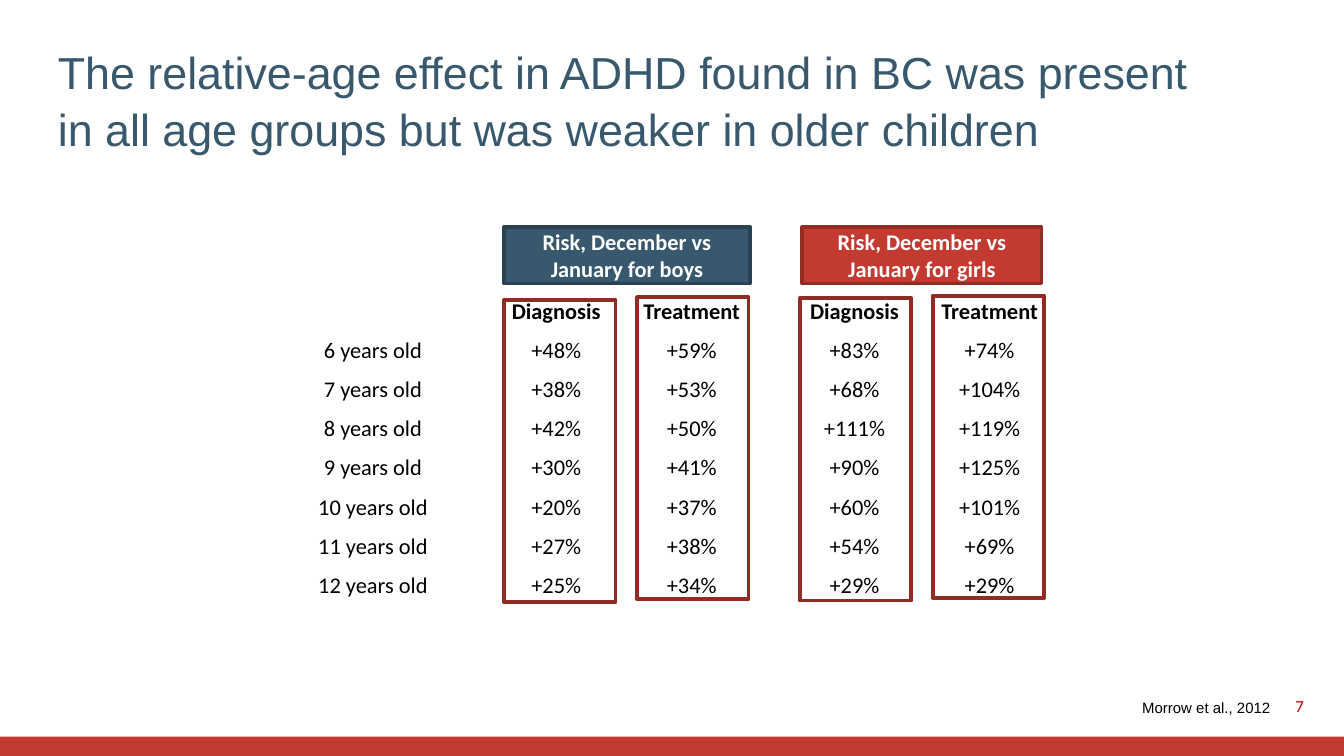
from dataclasses import dataclass

from pptx import Presentation
from pptx.dml.color import RGBColor
from pptx.enum.shapes import MSO_SHAPE
from pptx.enum.text import MSO_ANCHOR, MSO_AUTO_SIZE, PP_ALIGN
from pptx.util import Pt


@dataclass(frozen=True)
class Theme:
    blue: str = "38586E"
    navy: str = "294151"
    red: str = "C33B30"
    dark: str = "902C24"
    page: str = "C00000"
    black: str = "000000"
    white: str = "FFFFFF"
    head: str = "Arial"
    body: str = "Calibri"
    title: int = 24
    cell: int = 12
    num: int = 9
    cite: int = 8


THEME = Theme()
ROW_TOP, ROW_STEP, ROW_H = 157.2, 21, 18
AGE_LEFT, AGE_W = 154.8, 90
CELL_W, FRAME_W, FRAME_H = 66, 59.8, 162

AGES = range(6, 13)
# Heading, cell left, frame left, frame top, risk by age
COLUMNS = [
    ("Diagnosis", 265, 270, 160.6, [48, 38, 42, 30, 20, 27, 25]),
    ("Treatment", 337.6, 341.3, 159.1, [59, 53, 50, 41, 37, 38, 34]),
    ("Diagnosis", 424.8, 428.4, 159.8, [83, 68, 111, 90, 60, 54, 29]),
    ("Treatment", 497.2, 499.7, 158.4, [74, 104, 119, 125, 101, 69, 29]),
]


def write(shape, text, size, color, font=THEME.body, bold=False,
          align=PP_ALIGN.CENTER, anchor=MSO_ANCHOR.MIDDLE):
    frame = shape.text_frame
    frame.word_wrap = True
    frame.auto_size = MSO_AUTO_SIZE.NONE
    frame.vertical_anchor = anchor
    frame.text = text
    para = frame.paragraphs[0]
    para.alignment = align
    para.font.size = Pt(size)
    para.font.name = font
    para.font.bold = bold
    para.font.color.rgb = RGBColor.from_string(color)


def add_text(slide, box, text, size, color, **style):
    shape = slide.shapes.add_textbox(*map(Pt, box))
    write(shape, text, size, color, **style)
    return shape


def add_cell(slide, left, row, width, text, bold=False):
    """Add one table entry; row 0 holds the column headings."""
    box = (left, ROW_TOP + row * ROW_STEP, width, ROW_H)
    frame = add_text(slide, box, text, THEME.cell, THEME.black,
                     bold=bold).text_frame
    frame.margin_left = frame.margin_right = 0
    frame.margin_top = frame.margin_bottom = 0


def add_box(slide, box, fill=None, line=None):
    shape = slide.shapes.add_shape(MSO_SHAPE.RECTANGLE, *map(Pt, box))
    shape.shadow.inherit = False
    if fill:
        shape.fill.solid()
        shape.fill.fore_color.rgb = RGBColor.from_string(fill)
    else:
        shape.fill.background()
    if line:
        shape.line.color.rgb = RGBColor.from_string(line)
        shape.line.width = Pt(2)
    else:
        shape.line.fill.background()
    return shape


def add_title(slide, text):
    title = slide.shapes.title
    title.left, title.top = Pt(23.8), Pt(28.8)
    title.width, title.height = Pt(641.5), Pt(48.2)
    write(title, text, THEME.title, THEME.blue, font=THEME.head,
          align=PP_ALIGN.LEFT)
    title.text_frame.paragraphs[0].line_spacing = 1.05


def add_banner(slide, left, width, who, fill, line):
    shape = add_box(slide, (left, 121.7, width, 30.2), fill, line)
    write(shape, f"Risk, December vs January for {who}", THEME.cell,
          THEME.white, bold=True)


def add_risks(slide):
    for row, age in enumerate(AGES, 1):
        add_cell(slide, AGE_LEFT, row, AGE_W, f"{age} years old")
    for head, left, edge, top, risks in COLUMNS:
        add_cell(slide, left, 0, CELL_W, head, bold=True)
        for row, risk in enumerate(risks, 1):
            add_cell(slide, left, row, CELL_W, f"+{risk}%")
        add_box(slide, (edge, top, FRAME_W, FRAME_H), line=THEME.dark)


def add_footer(slide):
    add_box(slide, (0, 394.6, 720, 10.4), THEME.red)
    add_text(slide, (678.2, 367.2, 27.4, 21.6), "7", THEME.num, THEME.page,
             align=PP_ALIGN.RIGHT)
    add_text(slide, (604.8, 370.8, 90.7, 18), "Morrow et al., 2012",
             THEME.cite, THEME.black, font=THEME.head,
             align=PP_ALIGN.LEFT, anchor=MSO_ANCHOR.TOP)


def main():
    deck = Presentation()
    deck.slide_width, deck.slide_height = Pt(720), Pt(405)
    slide = deck.slides.add_slide(deck.slide_layouts.get_by_name("Title Only"))
    add_title(slide, "The relative-age effect in ADHD found in BC was present "
                     "in all age groups but was weaker in older children")
    add_footer(slide)
    add_banner(slide, 270, 131.8, "boys", THEME.blue, THEME.navy)
    add_banner(slide, 429.8, 128.2, "girls", THEME.red, THEME.dark)
    add_risks(slide)
    deck.save("out.pptx")


if __name__ == "__main__":
    main()
